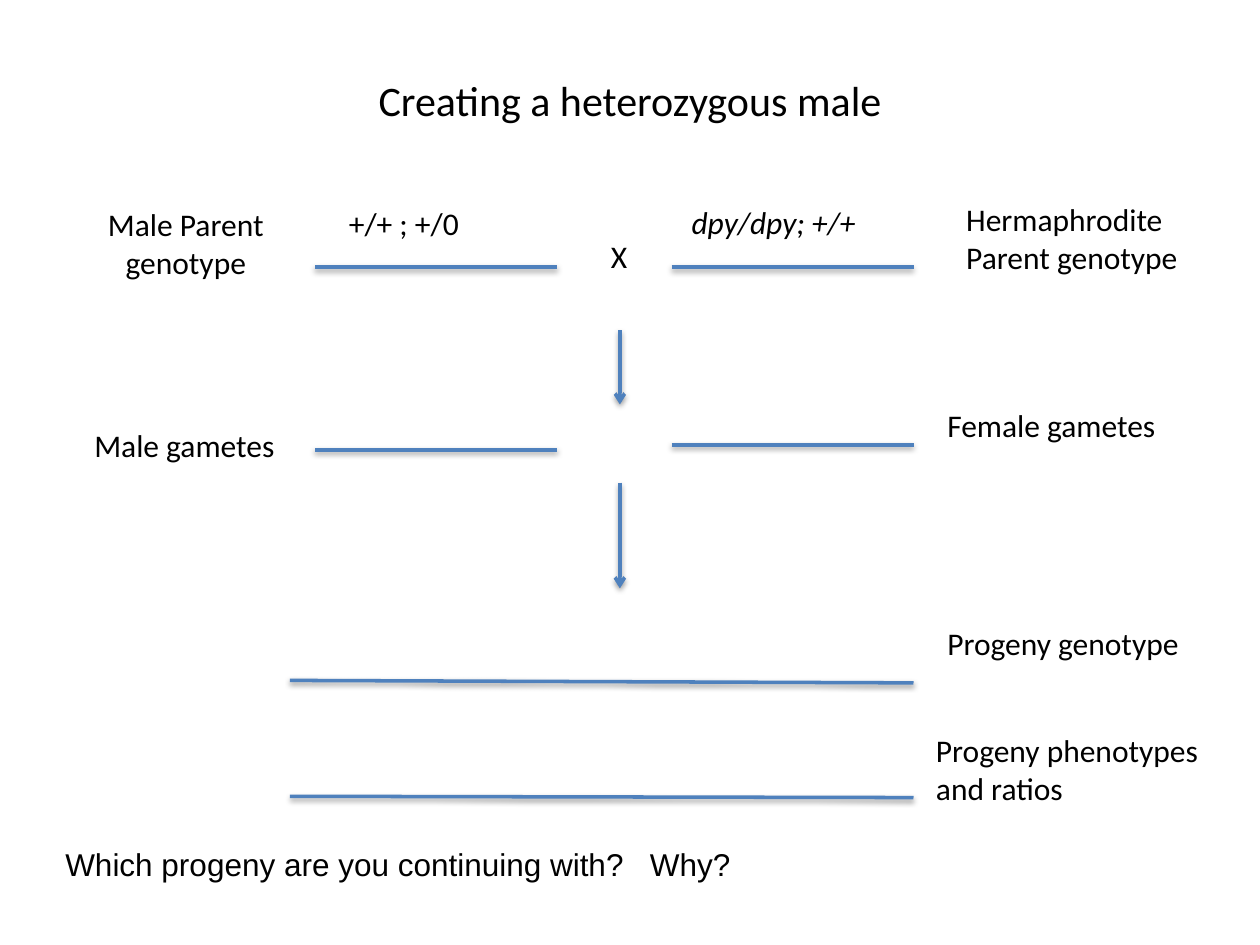
from pptx import Presentation
from pptx.dml.color import RGBColor
from pptx.enum.shapes import MSO_CONNECTOR as Connector
from pptx.enum.text import MSO_ANCHOR as Anchor, MSO_AUTO_SIZE as AutoSize, PP_ALIGN as Align
from pptx.oxml import parse_xml
from pptx.oxml.ns import nsdecls
from pptx.util import Inches, Pt

BLACK, BLUE = "000000", "4F81BD"
SHADOW = (
    f'<a:effectLst {nsdecls("a")}>'
    '<a:outerShdw blurRad="40000" dist="20000" dir="5400000" rotWithShape="0">'
    '<a:srgbClr val="000000"><a:alpha val="38000"/></a:srgbClr>'
    '</a:outerShdw></a:effectLst>'
)
ARROWHEAD = f'<a:tailEnd {nsdecls("a")} type="arrow"/>'
QUESTION_TAB = (
    f'<a:tabLst {nsdecls("a")}><a:tab pos="{Inches(4.64)}" algn="l"/></a:tabLst>'
)


def color(hex_string):
    return RGBColor.from_string(hex_string)


def format_text(paragraph, align=Align.LEFT, **font_values):
    paragraph.alignment = align
    values = {"name": "Calibri", "size": Pt(18), **font_values}
    for run in paragraph.runs:
        for attribute, value in values.items():
            setattr(run.font, attribute, value)
        run.font.color.rgb = color(BLACK)


prs = Presentation()
prs.slide_width, prs.slide_height = Inches(10), Inches(7.5)
slide = prs.slides.add_slide(prs.slide_layouts[0])

subtitle = slide.placeholders[1].element
subtitle.getparent().remove(subtitle)

title = slide.shapes.title
title.left, title.top = Inches(0.75), Inches(0.42)
title.width, title.height = Inches(8.5), Inches(0.75)
title.text_frame.text = "Creating a heterozygous male"
title.text_frame.vertical_anchor = Anchor.MIDDLE
format_text(title.text_frame.paragraphs[0], Align.CENTER, size=Pt(24))

# Lines to write on, and the arrows from one generation to the next
male_x, female_x, arrow_x, progeny_x = (2.5, 4.42), (5.33, 7.25), (4.92, 4.92), (2.3, 7.25)
cross_lines = [
    (male_x, (2.12, 2.12), False),
    (female_x, (2.12, 2.12), False),
    (arrow_x, (2.62, 3.21), True),
    (male_x, (3.57, 3.57), False),
    (female_x, (3.53, 3.53), False),
    (arrow_x, (3.83, 4.67), True),
    (progeny_x, (5.4, 5.42), False),
    (progeny_x, (6.32, 6.33), False),
]
for (x1, x2), (y1, y2), is_arrow in cross_lines:
    connector = slide.shapes.add_connector(
        Connector.STRAIGHT, Inches(x1), Inches(y1), Inches(x2), Inches(y2))
    connector.line.width = Pt(2)
    connector.line.color.rgb = color(BLUE)
    if is_arrow:
        connector.line._get_or_add_ln().append(parse_xml(ARROWHEAD))
    connector._element.spPr.append(parse_xml(SHADOW))

# Left, top, width, lines of text, format values
labels = [
    (7.57, 1.54, 1.91, ["Hermaphrodite", "Parent genotype"], {}),
    (0.75, 1.58, 1.45, ["Male Parent", "genotype"], {"align": Align.CENTER}),
    (4.75, 1.83, 0.33, ["X"], {}),
    (0.65, 3.33, 1.65, ["Male gametes"], {}),
    (7.42, 3.17, 1.87, ["Female gametes"], {}),
    (7.42, 4.9, 2.12, ["Progeny genotype"], {}),
    (7.33, 5.75, 2.31, ["Progeny phenotypes", "and ratios"], {}),
    (2.67, 1.57, 1.08, ["+/+ ; +/0"], {}),
    (5.39, 1.56, 1.58, ["dpy/dpy; +/+"], {"italic": True}),
    (0.42, 6.66, 5.53, ["Which progeny are you continuing with?\tWhy?"], {"name": "Arial"}),
]
for left, top, width, lines, values in labels:
    height = 0.4 if len(lines) == 1 else 0.71
    label = slide.shapes.add_textbox(Inches(left), Inches(top), Inches(width), Inches(height))
    frame = label.text_frame
    frame.word_wrap = False
    frame.auto_size = AutoSize.SHAPE_TO_FIT_TEXT
    frame.text = "\n".join(lines)
    for paragraph in frame.paragraphs:
        if "\t" in paragraph.text:
            paragraph._p.get_or_add_pPr().append(parse_xml(QUESTION_TAB))
            frame.word_wrap = True
        format_text(paragraph, **values)

prs.save("out.pptx")
